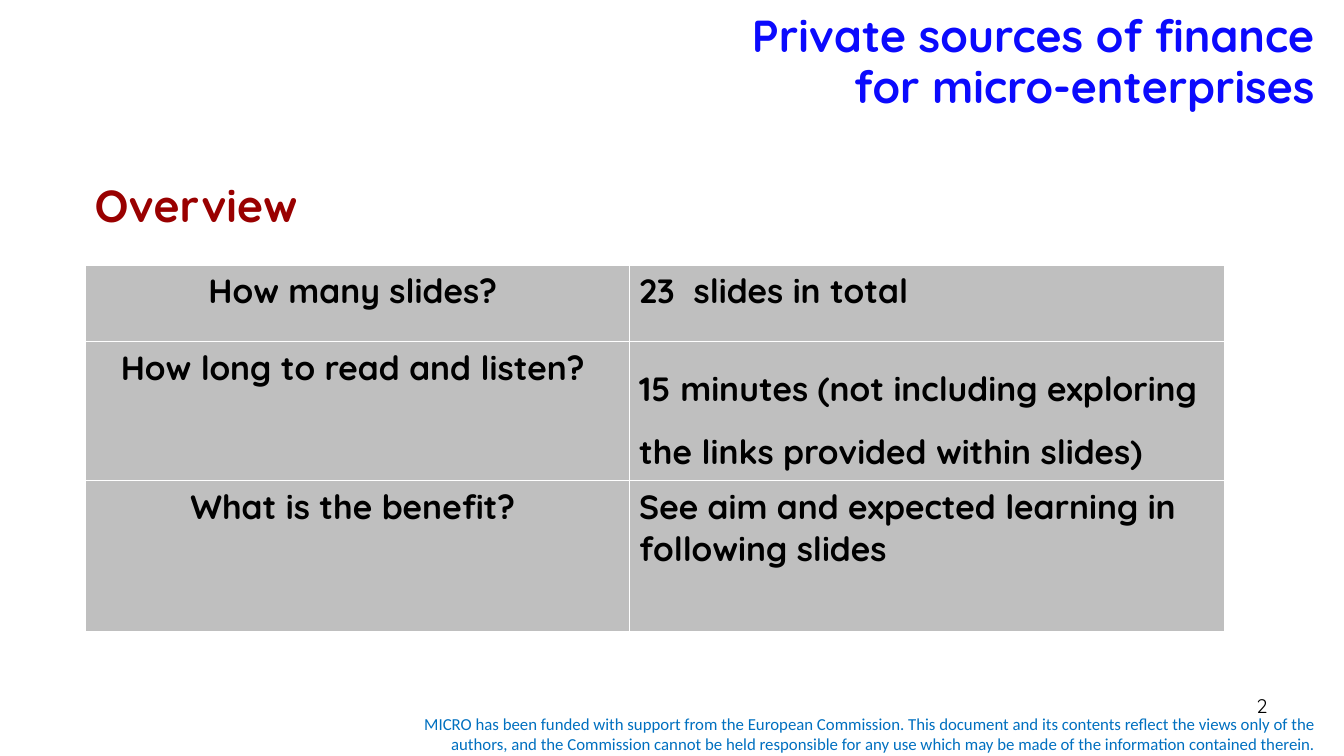
"""Build the overview slide on private sources of finance for micro-enterprises."""
from lxml.etree import SubElement
from pptx import Presentation
from pptx.dml.color import RGBColor
from pptx.enum.text import MSO_ANCHOR, MSO_AUTO_SIZE, PP_ALIGN
from pptx.oxml.ns import qn
from pptx.util import Inches, Pt

BLUE = RGBColor(0x0B, 0x0A, 0xFD)
RED = RGBColor(0x99, 0x00, 0x00)
FOOTER_BLUE = RGBColor(0x00, 0x70, 0xC0)
GREY = RGBColor(0xBF, 0xBF, 0xBF)
BLACK = RGBColor(0x00, 0x00, 0x00)
WHITE = RGBColor(0xFF, 0xFF, 0xFF)

OVERVIEW = [
    ("How many slides? ", "23  slides in total", 0.76, 1.0),
    ("How long to read and listen? ",
     "15 minutes (not including exploring the links provided within slides)", 1.38, 1.5),
    ("What is the benefit? ", "See aim and expected learning in following slides", 1.5, 1.0),
]
COLUMN_WIDTHS = (5.39, 5.91)
FOOTER = (
    "MICRO has been funded with support from the European Commission. "
    "This document and its contents reflect the views only of the authors, "
    "and the Commission cannot be held responsible for any use which may be made "
    "of the information contained therein."
)


def write_text(frame, text, size, color=BLACK, bold=False, font="Quicksand",
               align=PP_ALIGN.LEFT, anchor=MSO_ANCHOR.TOP, spacing=1.0):
    frame.word_wrap = True
    frame.vertical_anchor = anchor
    paragraph = frame.paragraphs[0]
    paragraph.text = text
    paragraph.alignment = align
    paragraph.line_spacing = spacing
    for run in paragraph.runs:
        run.font.name = font
        run.font.size = Pt(size)
        run.font.bold = bold
        run.font.color.rgb = color


class SlideBuilder:
    def __init__(self, presentation):
        self.slide = presentation.slides.add_slide(presentation.slide_layouts[5])
        self.border_color = WHITE
        self.border_width = Pt(1)
        self.cell_fill = GREY

    def title(self, text, left, top, width, height, **style):
        shape = self.slide.shapes.title
        shape.left, shape.top = Inches(left), Inches(top)
        shape.width, shape.height = Inches(width), Inches(height)
        shape.text_frame.auto_size = MSO_AUTO_SIZE.NONE
        write_text(shape.text_frame, text, **style)

    def text(self, text, left, top, width, height, **style):
        box = self.slide.shapes.add_textbox(
            Inches(left), Inches(top), Inches(width), Inches(height))
        write_text(box.text_frame, text, **style)

    def format_cell(self, cell):
        properties = cell._tc.get_or_add_tcPr()
        for side in ("L", "R", "T", "B"):
            line = SubElement(properties, qn(f"a:ln{side}"), w=str(self.border_width))
            fill = SubElement(line, qn("a:solidFill"))
            SubElement(fill, qn("a:srgbClr"), val=str(self.border_color))
        cell.fill.solid()
        cell.fill.fore_color.rgb = self.cell_fill

    def table(self, rows, widths, left, top):
        height = sum(row[2] for row in rows)
        table = self.slide.shapes.add_table(
            len(rows), len(widths), Inches(left), Inches(top),
            Inches(sum(widths)), Inches(height)).table
        table.first_row = False
        table.horz_banding = False
        for column, width in zip(table.columns, widths):
            column.width = Inches(width)
        for index, (question, answer, row_height, spacing) in enumerate(rows):
            table.rows[index].height = Inches(row_height)
            question_cell, answer_cell = table.rows[index].cells
            write_text(question_cell.text_frame, question, 24, bold=True,
                       align=PP_ALIGN.CENTER)
            write_text(answer_cell.text_frame, answer, 24, bold=True, spacing=spacing)
            self.format_cell(question_cell)
            self.format_cell(answer_cell)


def main():
    presentation = Presentation()
    presentation.slide_width = Inches(13.33)
    presentation.slide_height = Inches(7.5)
    builder = SlideBuilder(presentation)
    builder.title("Private sources of finance\nfor micro-enterprises", 1.14, 0, 12, 1.25,
                  size=32, color=BLUE, bold=True, align=PP_ALIGN.RIGHT,
                  anchor=MSO_ANCHOR.MIDDLE, spacing=0.95)
    builder.text(FOOTER, 3.75, 7.03, 9.4, 0.5, size=12, color=FOOTER_BLUE,
                 font="Calibri", align=PP_ALIGN.RIGHT, anchor=MSO_ANCHOR.MIDDLE)
    builder.table(OVERVIEW, COLUMN_WIDTHS, 0.85, 2.63)
    builder.text("2", 9.56, 6.83, 3.11, 0.52, size=14, align=PP_ALIGN.RIGHT)
    builder.text("Overview", 0.84, 1.71, 2.9, 0.64, size=32, color=RED, bold=True)
    presentation.save("out.pptx")


if __name__ == "__main__":
    main()
